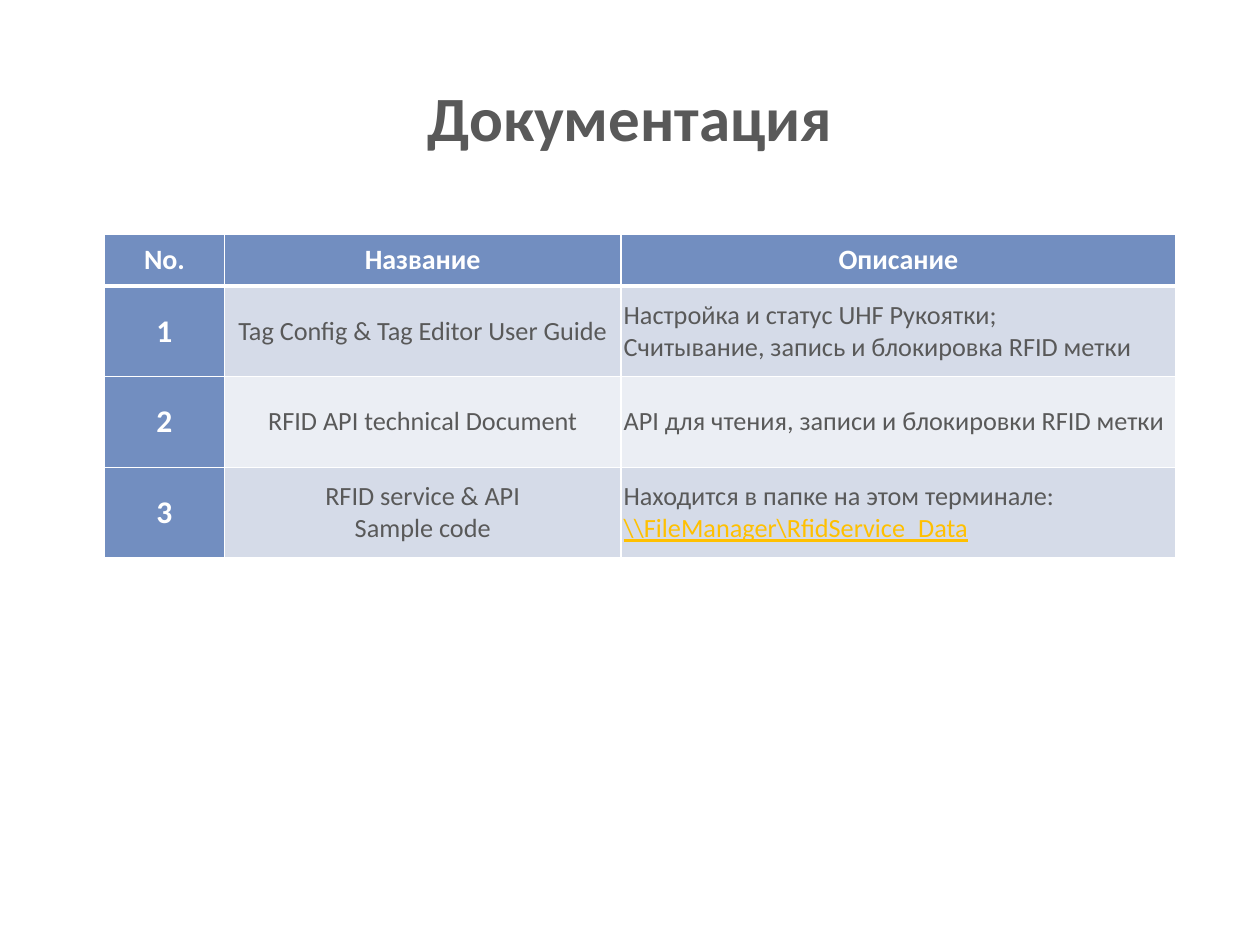
from lxml import etree
from pptx import Presentation
from pptx.dml.color import RGBColor
from pptx.enum.text import MSO_ANCHOR, PP_ALIGN
from pptx.oxml.ns import qn
from pptx.util import Inches, Pt

LEFT, CENTER = PP_ALIGN.LEFT, PP_ALIGN.CENTER
MIDDLE = MSO_ANCHOR.MIDDLE

FONT = "Calibri"
COLORS = {
    "white": "FFFFFF",
    "text": "595959",
    "header": "728EC0",
    "odd_row": "D5DBE8",
    "even_row": "EBEEF4",
    "path": "FFC000",
}

FOLDER = r"\\FileManager\RfidService_Data"
HEADINGS = ["No.", "Название", "Описание"]
DOCUMENTS = [
    (["Tag Config & Tag Editor User Guide"],
     ["Настройка и статус UHF Рукоятки;",
      "Считывание, запись и блокировка RFID метки"]),
    (["RFID API technical Document"],
     ["API для чтения, записи и блокировки RFID метки"]),
    (["RFID service & API", "Sample code"],
     ["Находится в папке на этом терминале:", FOLDER]),
]
COLUMN_WIDTHS = [0.95, 3.15, 4.4]
HEADER_HEIGHT, ROW_HEIGHT = 0.41, 0.72


def rgb(name):
    return RGBColor.from_string(COLORS[name])


def write_text(frame, lines, size=15, color="text", bold=False, align=CENTER):
    """Write one paragraph per line; the folder path is underlined."""
    for index, line in enumerate(lines):
        paragraph = frame.paragraphs[0] if index == 0 else frame.add_paragraph()
        paragraph.alignment = align
        run = paragraph.add_run()
        run.text = line
        font = run.font
        font.name, font.size, font.bold = FONT, Pt(size), bold
        is_path = line == FOLDER
        font.color.rgb = rgb("path" if is_path else color)
        if is_path:
            font.underline = True


def add_borders(cell, top=1, bottom=1):
    """Draw white cell borders; call before the fill, which must follow them."""
    properties = cell._tc.get_or_add_tcPr()
    for side, width in (("L", 1), ("R", 1), ("T", top), ("B", bottom)):
        line = etree.SubElement(properties, qn(f"a:ln{side}"), w=str(Pt(width)))
        fill = etree.SubElement(line, qn("a:solidFill"))
        etree.SubElement(fill, qn("a:srgbClr"), val=COLORS["white"])


class SlideBuilder:
    def __init__(self, presentation):
        self.slide = presentation.slides.add_slide(presentation.slide_layouts[5])
        background = self.slide.background.fill
        background.solid()
        background.fore_color.rgb = rgb("white")

    def add_title(self, text):
        title = self.slide.shapes.title
        title.left, title.top = Inches(0.5), Inches(0.3)
        title.width, title.height = Inches(9), Inches(1.25)
        title.text_frame.vertical_anchor = MIDDLE
        write_text(title.text_frame, [text], size=36, bold=True)

    def fill_cell(self, cell, lines, fill, top=1, bottom=1, **text_format):
        cell.vertical_anchor = MIDDLE
        cell.margin_left = cell.margin_right = Inches(0.02)
        cell.margin_top = cell.margin_bottom = 0
        add_borders(cell, top, bottom)
        cell.fill.solid()
        cell.fill.fore_color.rgb = rgb(fill)
        write_text(cell.text_frame, lines, **text_format)

    def add_document_table(self, left, top):
        heights = [HEADER_HEIGHT] + [ROW_HEIGHT] * len(DOCUMENTS)
        table = self.slide.shapes.add_table(
            len(heights), len(COLUMN_WIDTHS), Inches(left), Inches(top),
            Inches(sum(COLUMN_WIDTHS)), Inches(sum(heights))).table
        for column, width in zip(table.columns, COLUMN_WIDTHS):
            column.width = Inches(width)
        for row, height in zip(table.rows, heights):
            row.height = Inches(height)

        for column, heading in enumerate(HEADINGS):
            self.fill_cell(table.cell(0, column), [heading], "header",
                           bottom=3, size=16, color="white", bold=True)
        for number, (name, description) in enumerate(DOCUMENTS, start=1):
            band = "odd_row" if number % 2 else "even_row"
            edge = 3 if number == 1 else 1
            self.fill_cell(table.cell(number, 0), [str(number)], "header",
                           top=edge, size=18, color="white", bold=True)
            self.fill_cell(table.cell(number, 1), name, band, top=edge)
            self.fill_cell(table.cell(number, 2), description, band,
                           top=edge, align=LEFT)


def main():
    presentation = Presentation()
    presentation.slide_width, presentation.slide_height = Inches(10), Inches(7.5)
    builder = SlideBuilder(presentation)
    builder.add_title("Документация")
    builder.add_document_table(left=0.83, top=1.86)
    presentation.save("out.pptx")


if __name__ == "__main__":
    main()
